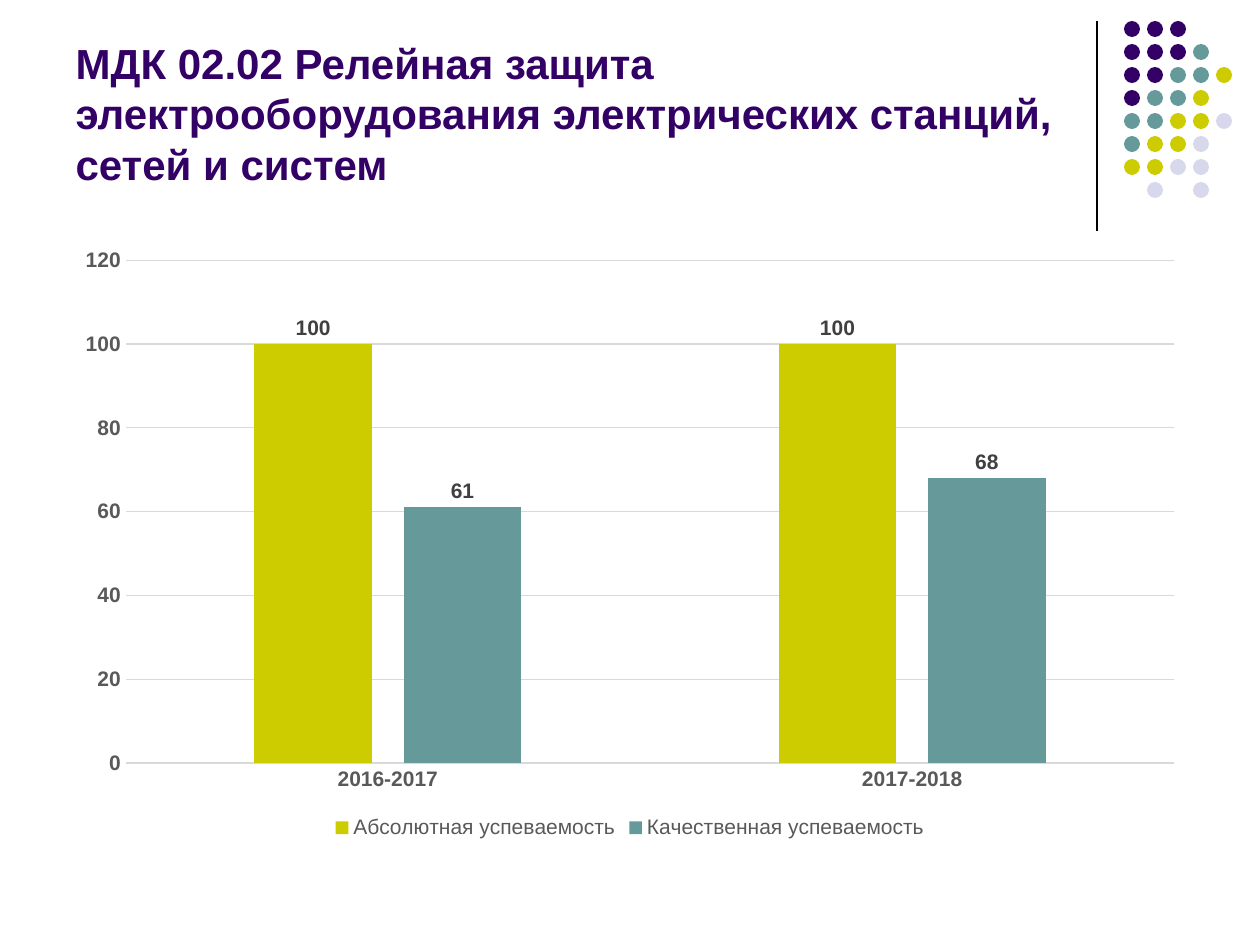
from lxml import etree
from pptx import Presentation
from pptx import util as u
from pptx.chart.data import CategoryChartData
from pptx.dml.color import RGBColor
from pptx.enum import chart as charts, shapes, text
from pptx.oxml.ns import qn

PX = u.Inches(1) / 126
BLACK = RGBColor(0x00, 0x00, 0x00)
PURPLE = RGBColor(0x33, 0x00, 0x66)
TEAL = RGBColor(0x66, 0x99, 0x99)
OLIVE = RGBColor(0xCC, 0xCC, 0x00)
LAVENDER = RGBColor(0xD8, 0xD8, 0xEC)
GRID_GREY = RGBColor(0xD9, 0xD9, 0xD9)
AXIS_GREY = RGBColor(0x59, 0x59, 0x59)
LABEL_GREY = RGBColor(0x40, 0x40, 0x40)

DOT_COLOURS = {"P": PURPLE, "T": TEAL, "O": OLIVE, "L": LAVENDER}
DOT_ROWS = ["PPP", "PPPT", "PPTTO", "PTTO", "TTOOL", "TOOL", "OOLL", " L L"]
DOT_PITCH, DOT_SIZE = 23, 16

YEARS = ["2016-2017", "2017-2018"]
RESULTS = [
    ("Абсолютная успеваемость", (100, 100), OLIVE),
    ("Качественная успеваемость", (61, 68), TEAL),
]


def px(*lengths):
    return [round(length * PX) for length in lengths]


def style_font(font, size=12, colour=AXIS_GREY, bold=False):
    font.name = "Arial"
    font.size = u.Pt(size)
    font.bold = bold
    font.color.rgb = colour


def style_line(line, colour):
    line.color.rgb = colour
    line.width = u.Pt(0.75)


def set_text(frame, wording, anchor=text.MSO_ANCHOR.BOTTOM,
             align=text.PP_ALIGN.LEFT, **font_format):
    frame.word_wrap = True
    frame.auto_size = text.MSO_AUTO_SIZE.NONE
    frame.vertical_anchor = anchor
    paragraph = frame.paragraphs[0]
    paragraph.alignment = align
    paragraph.line_spacing = 1.0
    run = paragraph.add_run()
    run.text = wording
    style_font(run.font, **font_format)


def add_divider(slide, x, top, bottom):
    divider = slide.shapes.add_connector(
        shapes.MSO_CONNECTOR.STRAIGHT, *px(x, top, x, bottom))
    style_line(divider.line, BLACK)
    etree.SubElement(divider._element.spPr, qn("a:effectLst"))


def add_dots(slide, left, top):
    dots = slide.shapes.add_group_shape()
    for row, pattern in enumerate(DOT_ROWS):
        for column, key in enumerate(pattern):
            if key == " ":
                continue
            dot = dots.shapes.add_shape(
                shapes.MSO_SHAPE.OVAL,
                *px(left + column * DOT_PITCH, top + row * DOT_PITCH,
                    DOT_SIZE, DOT_SIZE))
            dot.shadow.inherit = False
            dot.fill.solid()
            dot.fill.fore_color.rgb = DOT_COLOURS[key]
            dot.line.fill.background()


def add_title(slide, wording, *box):
    title = slide.shapes.title
    title.left, title.top, title.width, title.height = px(*box)
    set_text(title.text_frame, wording, size=24, colour=PURPLE, bold=True)


def style_axes(chart):
    for axis in (chart.category_axis, chart.value_axis):
        axis.major_tick_mark = charts.XL_TICK_MARK.NONE
        axis.minor_tick_mark = charts.XL_TICK_MARK.NONE
        style_font(axis.tick_labels.font, bold=True)
    style_line(chart.category_axis.format.line, GRID_GREY)
    scale = chart.value_axis
    scale.minimum_scale, scale.maximum_scale, scale.major_unit = 0, 120, 20
    scale.format.line.fill.background()
    style_line(scale.major_gridlines.format.line, GRID_GREY)


def style_bars(plot):
    plot.gap_width = 219
    plot.overlap = -27
    plot.vary_by_categories = False
    for series, (_, _, colour) in zip(plot.series, RESULTS):
        series.invert_if_negative = False
        series.format.fill.solid()
        series.format.fill.fore_color.rgb = colour
        labels = series.data_labels
        labels.show_value = True
        labels.position = charts.XL_LABEL_POSITION.OUTSIDE_END
        style_font(labels.font, colour=LABEL_GREY, bold=True)


def add_results_chart(slide, *box):
    results = CategoryChartData()
    results.categories = YEARS
    for name, values, _ in RESULTS:
        results.add_series(name, values)
    chart = slide.shapes.add_chart(
        charts.XL_CHART_TYPE.COLUMN_CLUSTERED, *px(*box), results).chart
    style_font(chart.font, size=10, colour=BLACK)
    chart.has_title = False
    style_axes(chart)
    style_bars(chart.plots[0])
    chart.has_legend = True
    chart.legend.position = charts.XL_LEGEND_POSITION.BOTTOM
    chart.legend.include_in_layout = False
    style_font(chart.legend.font)


def main():
    deck = Presentation()
    deck.slide_width, deck.slide_height = px(1260, 945)
    slide = deck.slides.add_slide(deck.slide_layouts[5])
    add_divider(slide, 1097, 21, 231)
    add_dots(slide, 1124, 21)
    add_title(slide, "МДК 02.02 Релейная защита электрооборудования "
              "электрических станций, сетей и систем", 63, 16, 1040, 179)
    add_results_chart(slide, 63, 237, 1134, 607)
    deck.save("out.pptx")


if __name__ == "__main__":
    main()
